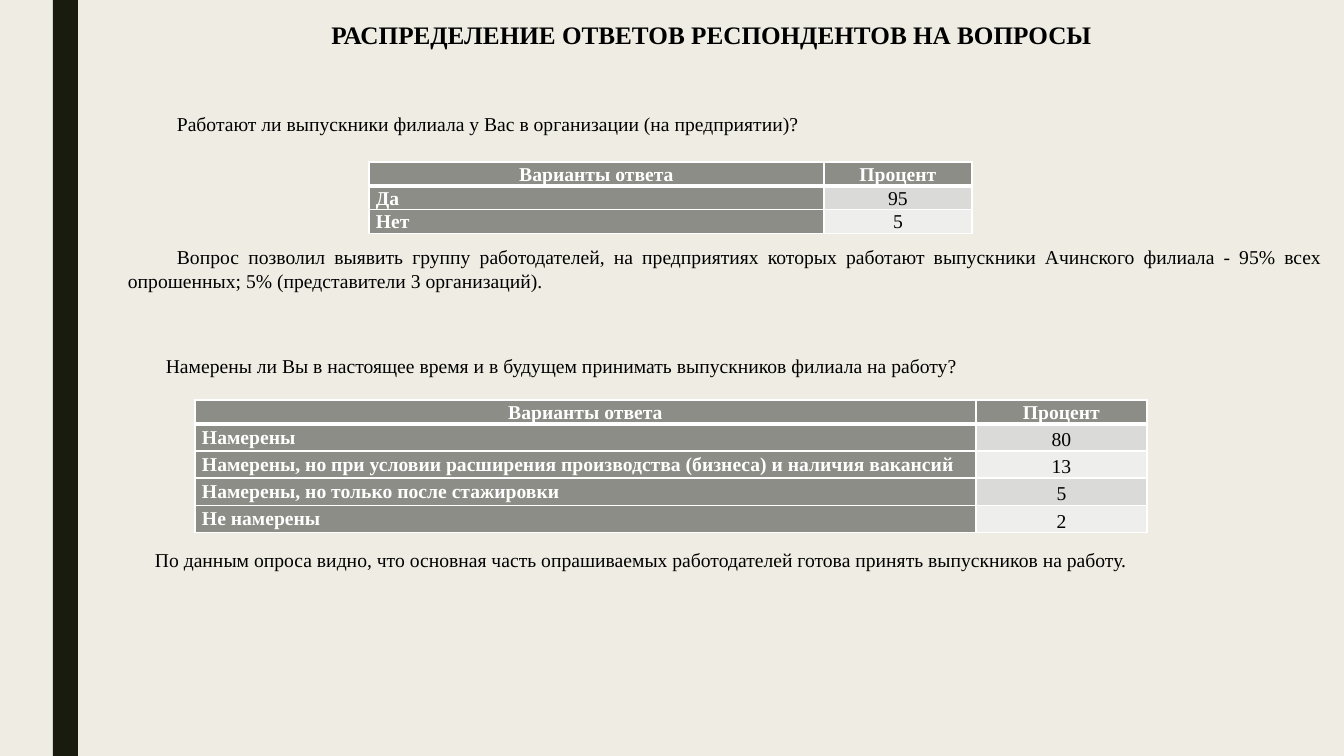
from lxml import etree
from pptx import Presentation
from pptx.dml.color import RGBColor
from pptx.enum.shapes import MSO_SHAPE
from pptx.enum.text import MSO_ANCHOR, PP_ALIGN
from pptx.oxml.ns import qn
from pptx.util import Pt

RECTANGLE = MSO_SHAPE.RECTANGLE
TOP, MIDDLE, BOTTOM = MSO_ANCHOR.TOP, MSO_ANCHOR.MIDDLE, MSO_ANCHOR.BOTTOM
LEFT, CENTER, RIGHT, JUSTIFY = PP_ALIGN.LEFT, PP_ALIGN.CENTER, PP_ALIGN.RIGHT, PP_ALIGN.JUSTIFY

FONT = "Times New Roman"
BLACK, WHITE = "000000", "FFFFFF"
BACKGROUND, STRIPE, LABEL_FILL = "EFEDE3", "191B0E", "8C8D86"
VALUE_FILLS = ("DADBD9", "EEEEED")
INDENT = 49
CELL_MARGIN = 7

TITLE = ("РАСПРЕДЕЛЕНИЕ ОТВЕТОВ РЕСПОНДЕНТОВ НА ВОПРОСЫ ", (195, 14, 913, 40))
PARAGRAPHS = [
    ("Работают ли выпускники филиала у Вас в организации (на предприятии)? ",
     (118, 107, 703, 34), MIDDLE, 1.0),
    ("Вопрос позволил выявить группу работодателей, на предприятиях которых работают "
     "выпускники Ачинского филиала - 95% всех опрошенных; 5% (представители 3 организаций).",
     (118, 240, 1214, 58), TOP, 1.0),
    (" Намерены ли Вы в настоящее время и в будущем принимать выпускников филиала на работу?",
     (102, 337, 1230, 42), TOP, 1.5),
    ("По данным опроса видно, что основная часть опрашиваемых работодателей готова принять "
     "выпускников на работу.",
     (96, 531, 1169, 42), TOP, 1.5),
]
HEADER = ("Варианты ответа", "Процент")
TABLES = [
    {"origin": (369, 162), "columns": (455, 148), "rows": (24, 23),
     "anchor": BOTTOM, "spacing": 1.0,
     "answers": [("Да", 95), ("Нет", 5)]},
    {"origin": (195, 400), "columns": (781, 171), "rows": (24, 27),
     "anchor": TOP, "spacing": 1.15,
     "answers": [
         ("Намерены", 80),
         ("Намерены, но при условии расширения производства (бизнеса) и наличия вакансий", 13),
         ("Намерены, но только после стажировки", 5),
         ("Не намерены", 2)]},
]


def px(value):
    return round(value * 914400 / 100.8)


def color(value):
    return RGBColor.from_string(value)


def write(frame, text, align, size=14, bold=False, ink=BLACK, spacing=1.0):
    paragraph = frame.paragraphs[0]
    paragraph.alignment = align
    paragraph.line_spacing = spacing
    run = paragraph.add_run()
    run.text = text
    run.font.name = FONT
    run.font.size = Pt(size)
    run.font.bold = bold
    run.font.color.rgb = color(ink)
    return paragraph


def add_text(slide, text, box, align, anchor=TOP, **style):
    frame = slide.shapes.add_textbox(*map(px, box)).text_frame
    frame.word_wrap = True
    frame.vertical_anchor = anchor
    return write(frame, text, align, **style)


def add_borders(cell, top, bottom):
    properties = cell._tc.get_or_add_tcPr()
    for side, width in (("L", 1), ("R", 1), ("T", top), ("B", bottom)):
        line = etree.SubElement(properties, qn(f"a:ln{side}"), w=str(Pt(width)))
        fill = etree.SubElement(line, qn("a:solidFill"))
        etree.SubElement(fill, qn("a:srgbClr"), val=WHITE)


def add_answers(slide, data):
    rows = [HEADER] + data["answers"]
    head, body = data["rows"]
    heights = [head] + [body] * len(data["answers"])
    box = (*data["origin"], sum(data["columns"]), sum(heights))
    table = slide.shapes.add_table(len(rows), len(HEADER), *map(px, box)).table
    for column, width in zip(table.columns, data["columns"]):
        column.width = px(width)
    for row, height in zip(table.rows, heights):
        row.height = px(height)
    for r, values in enumerate(rows):
        for c, value in enumerate(values):
            cell = table.cell(r, c)
            is_value = r > 0 and c == 1
            is_answer = r > 0 and c == 0
            cell.margin_left = cell.margin_right = px(CELL_MARGIN)
            cell.margin_top = cell.margin_bottom = 0
            cell.vertical_anchor = data["anchor"] if is_answer else BOTTOM
            add_borders(cell, 3 if r == 1 else 1, 3 if r == 0 else 1)
            cell.fill.solid()
            cell.fill.fore_color.rgb = color(VALUE_FILLS[(r - 1) % 2] if is_value else LABEL_FILL)
            write(cell.text_frame, str(value), LEFT if is_answer else CENTER,
                  bold=not is_value, ink=BLACK if is_value else WHITE,
                  spacing=data["spacing"] if is_answer else 1.0)


def main():
    presentation = Presentation()
    presentation.slide_width, presentation.slide_height = px(1344), px(756)
    slide = presentation.slides.add_slide(presentation.slide_layouts[6])
    slide.background.fill.solid()
    slide.background.fill.fore_color.rgb = color(BACKGROUND)

    stripe = slide.shapes.add_shape(RECTANGLE, *map(px, (53, 0, 25, 756)))
    stripe.shadow.inherit = False
    stripe.fill.solid()
    stripe.fill.fore_color.rgb = color(STRIPE)
    stripe.line.fill.background()

    title, title_box = TITLE
    add_text(slide, title, title_box, RIGHT, size=18, bold=True)
    for text, box, anchor, spacing in PARAGRAPHS:
        paragraph = add_text(slide, text, box, JUSTIFY, anchor, spacing=spacing)
        paragraph._p.get_or_add_pPr().set("indent", str(px(INDENT)))
    for data in TABLES:
        add_answers(slide, data)
    presentation.save("out.pptx")


if __name__ == "__main__":
    main()
